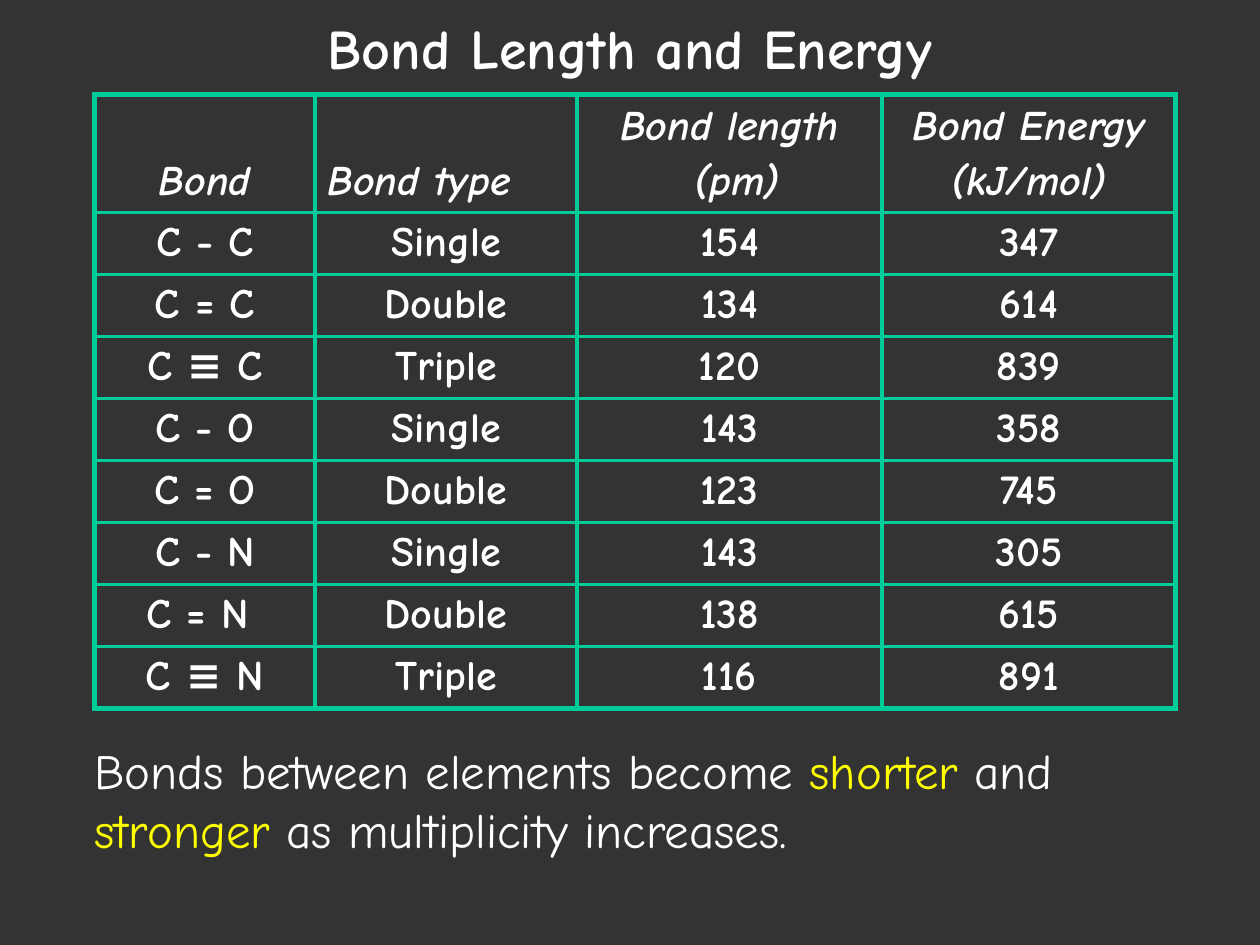
"""Build a slide with a table of bond lengths and energies and a closing remark."""
import pptx
import pptx.dml.color
import pptx.enum.text
import pptx.oxml
import pptx.oxml.ns
import pptx.util
from pptx.util import Cm, Pt

TITLE = "Bond Length and Energy"
HEADERS = [["Bond"], ["Bond type"], ["Bond length", " (pm)"], ["Bond Energy", "(kJ/mol)"]]
BONDS = [
    ("C - C", "Single", 154, 347),
    ("C = C", "Double", 134, 614),
    ("C ≡ C", "Triple", 120, 839),
    ("C - O", "Single", 143, 358),
    ("C = O", "Double", 123, 745),
    ("C - N", "Single", 143, 305),
    ("C = N ", "Double", 138, 615),
    ("C ≡ N", "Triple", 116, 891),
]
REMARK = [
    ("Bonds between elements become ", "text"),
    ("shorter", "accent"),
    (" and ", "text"),
    ("stronger", "accent"),
    (" as multiplicity increases.", "text"),
]
THEME = {
    "font": "Comic Neue",
    "background": "333333", "text": "FFFFFF", "accent": "FFFF00", "border": "00CC99",
    "title": 32, "cell": 24, "remark": 28,
    "inner": 2.25, "outer": 3,
}
COLUMN_WIDTHS = [4.44, 5.28, 6.15, 5.92]
HEADER_HEIGHT, ROW_HEIGHT = 2.37, 1.25
ALIGN = pptx.enum.text.PP_ALIGN
ANCHOR = pptx.enum.text.MSO_ANCHOR


def color(name):
    return pptx.dml.color.RGBColor.from_string(THEME[name])


def add_run(para, text, size, tone="text", bold=True, italic=False):
    span = para.add_run()
    span.text = text
    font = span.font
    font.name, font.size = THEME["font"], Pt(THEME[size])
    font.bold, font.italic = bold, italic
    font.color.rgb = color(tone)


def add_borders(cell, outer_sides):
    properties = cell._tc.get_or_add_tcPr()
    for side in "LRTB":
        width = Pt(THEME["outer" if side in outer_sides else "inner"])
        properties.append(pptx.oxml.parse_xml(
            f'<a:ln{side} {pptx.oxml.ns.nsdecls("a")} w="{int(width)}"><a:solidFill>'
            f'<a:srgbClr val="{THEME["border"]}"/></a:solidFill></a:ln{side}>'))


def fill_cell(cell, lines, align, anchor, italic):
    cell.vertical_anchor = anchor
    frame = cell.text_frame
    for index, line in enumerate(lines):
        para = frame.add_paragraph() if index else frame.paragraphs[0]
        para.alignment = align
        if index:
            para.space_before = Pt(4)
        add_run(para, line, "cell", italic=italic)


def add_bond_table(page):
    rows = [HEADERS] + [[[str(value)] for value in bond] for bond in BONDS]
    heights = [HEADER_HEIGHT] + [ROW_HEIGHT] * len(BONDS)
    table = page.shapes.add_table(
        len(rows), len(COLUMN_WIDTHS), Cm(1.91), Cm(1.91),
        Cm(sum(COLUMN_WIDTHS)), Cm(sum(heights))).table
    table.first_row = table.horz_banding = False
    for column, width in zip(table.columns, COLUMN_WIDTHS):
        column.width = Cm(width)
    for r, (row, height) in enumerate(zip(rows, heights)):
        table.rows[r].height = Cm(height)
        for c, lines in enumerate(row):
            cell = table.cell(r, c)
            edges = {"L": c == 0, "R": c == len(row) - 1, "T": r == 0, "B": r == len(rows) - 1}
            add_borders(cell, [side for side, outer in edges.items() if outer])
            cell.fill.background()
            header = r == 0
            fill_cell(cell, lines, ALIGN.LEFT if header and c == 1 else ALIGN.CENTER,
                      ANCHOR.BOTTOM if header else ANCHOR.TOP, header)


def main():
    deck = pptx.Presentation()
    deck.slide_width, deck.slide_height = Cm(25.4), Cm(19.05)
    page = deck.slides.add_slide(deck.slide_layouts[5])
    page.background.fill.solid()
    page.background.fill.fore_color.rgb = color("background")

    title = page.shapes.title
    title.left, title.top, title.width, title.height = Cm(1.91), Cm(0), Cm(21.59), Cm(1.91)
    title.text_frame.vertical_anchor = ANCHOR.MIDDLE
    title.text_frame.paragraphs[0].alignment = ALIGN.CENTER
    add_run(title.text_frame.paragraphs[0], TITLE, "title")

    add_bond_table(page)

    box = page.shapes.add_textbox(Cm(1.65), Cm(14.81), Cm(22.68), Cm(2.62))
    box.text_frame.word_wrap = True
    for text, tone in REMARK:
        add_run(box.text_frame.paragraphs[0], text, "remark", tone, bold=False)

    deck.save("out.pptx")


if __name__ == "__main__":
    main()
